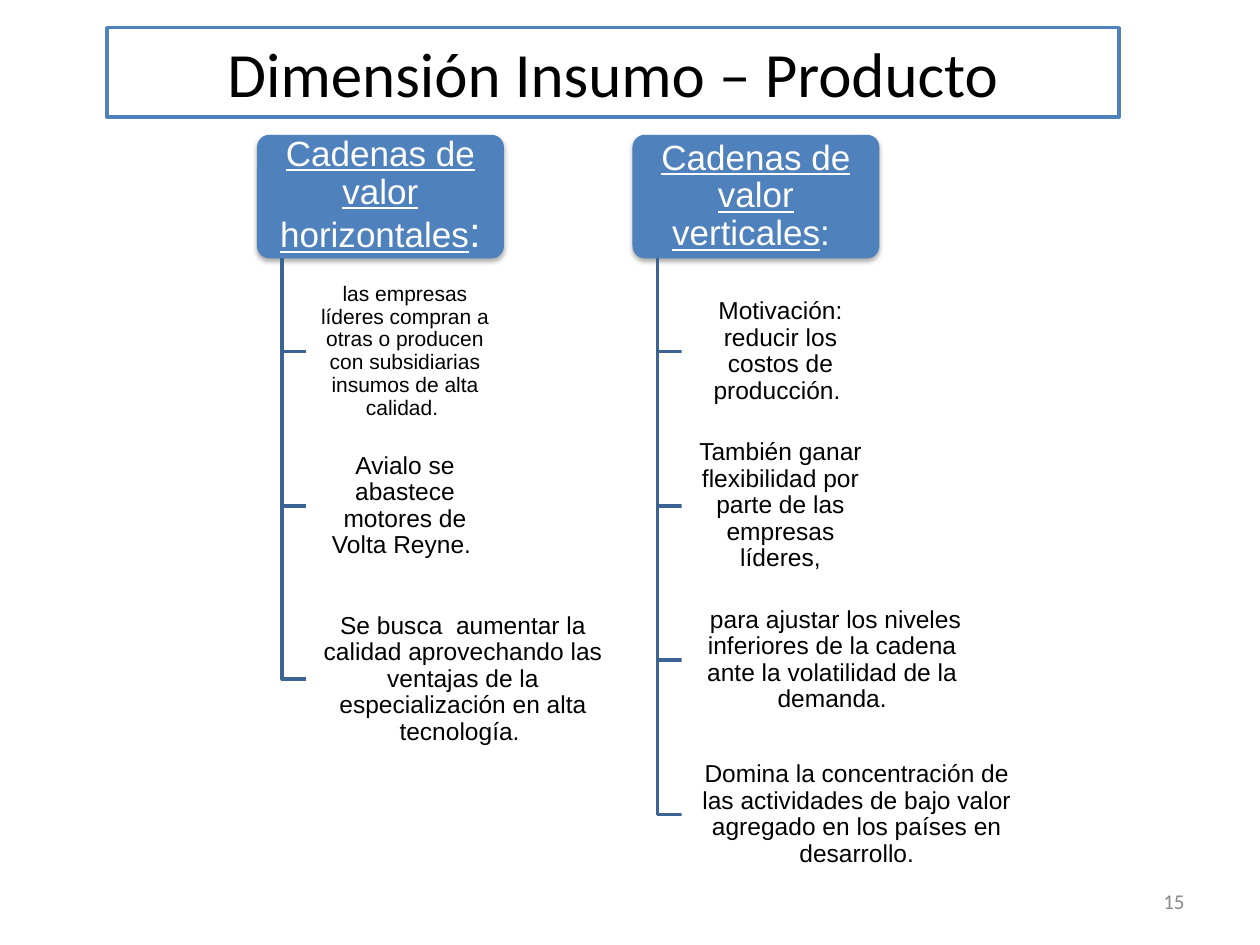
from lxml import etree
from pptx import Presentation
from pptx.dml.color import RGBColor
from pptx.enum.shapes import MSO_SHAPE
from pptx.enum.text import MSO_ANCHOR, MSO_AUTO_SIZE, PP_ALIGN
from pptx.oxml.ns import qn
from pptx.util import Inches, Pt

ROUNDED = MSO_SHAPE.ROUNDED_RECTANGLE
MIDDLE = MSO_ANCHOR.MIDDLE
CENTER, RIGHT = PP_ALIGN.CENTER, PP_ALIGN.RIGHT

COLORS = {"blue": "4F81BD", "branch": "3B6495", "white": "FFFFFF",
          "black": "000000", "gray": "898989"}

TITLE = "Dimensión Insumo – Producto"
PAGE = "15"

# Each chain: left edge, heading, heading ending (text, size),
# and items (text, size, width, height)
CHAINS = [
    (2.04, "Cadenas de valor horizontales", (":", 24), [
        ("las empresas líderes compran a otras o producen con subsidiarias "
         "insumos de alta calidad. ", 12, 1.57, 0.98),
        ("Avialo se abastece motores de Volta Reyne. ", 14, 1.57, 0.98),
        ("Se busca  aumentar la calidad aprovechando las ventajas de la "
         "especialización en alta tecnología. ", 14, 2.49, 1.28),
    ]),
    (5.02, "Cadenas de valor verticales", (": ", 20), [
        ("Motivación: reducir los costos de producción. ", 14, 1.57, 0.98),
        ("También ganar flexibilidad por parte de las empresas líderes,",
         14, 1.57, 0.98),
        (" para ajustar los niveles inferiores de la cadena ante la "
         "volatilidad de la demanda.", 14, 2.39, 0.98),
        ("Domina la concentración de las actividades de bajo valor agregado "
         "en los países en desarrollo.", 14, 2.78, 0.98),
    ]),
]

HEAD_TOP, HEAD_W, HEAD_H = 1.07, 1.96, 0.98
HEAD_BOTTOM = HEAD_TOP + HEAD_H
ITEM_TOP, ITEM_STEP = 2.3, 1.225
TRUNK_DX, ITEM_DX = 0.2, 0.39


def rgb(name):
    return RGBColor.from_string(COLORS[name])


def style_run(r, size, color, font="Arial"):
    r.font.size = Pt(size)
    r.font.name = font
    r.font.color.rgb = rgb(color)


def set_frame(tf, inset_x, inset_y):
    tf.word_wrap = True
    tf.auto_size = MSO_AUTO_SIZE.NONE
    tf.vertical_anchor = MIDDLE
    tf.margin_left = tf.margin_right = Inches(inset_x)
    tf.margin_top = tf.margin_bottom = Inches(inset_y)


def add_box(slide, x, y, w, h, fill, inset_x, inset_y):
    """Add a rounded box and return it with its centred first paragraph."""
    s = slide.shapes.add_shape(ROUNDED, Inches(x), Inches(y), Inches(w), Inches(h))
    s.adjustments[0] = 0.1
    s.fill.solid()
    s.fill.fore_color.rgb = rgb(fill)
    s.line.fill.background()
    s.shadow.inherit = False
    set_frame(s.text_frame, inset_x, inset_y)
    p = s.text_frame.paragraphs[0]
    p.alignment = CENTER
    p.line_spacing = 0.9
    return s, p


def add_soft_shadow(s):
    effects = s.element.spPr.find(qn("a:effectLst"))
    shadow = etree.SubElement(effects, qn("a:outerShdw"), blurRad=str(Pt(3.1)),
                              dist=str(Pt(1.8)), dir="5400000", rotWithShape="0")
    color = etree.SubElement(shadow, qn("a:srgbClr"), val=COLORS["black"])
    etree.SubElement(color, qn("a:alpha"), val="35000")


def add_heading(slide, x, heading, ending):
    s, p = add_box(slide, x, HEAD_TOP, HEAD_W, HEAD_H, "blue", 0.05, 0.03)
    add_soft_shadow(s)
    for text, size, underline in ((heading, 20, True), (*ending, False)):
        r = p.add_run()
        r.text = text
        style_run(r, size, "white")
        r.font.underline = underline


def add_branch(slide, x, y, end_x):
    """Draw an elbow from the heading's bottom edge to an item's middle."""
    builder = slide.shapes.build_freeform(Inches(x), Inches(HEAD_BOTTOM))
    builder.add_line_segments([(Inches(x), Inches(y)), (Inches(end_x), Inches(y))],
                              close=False)
    s = builder.convert_to_shape()
    s.fill.background()
    s.line.color.rgb = rgb("branch")
    s.line.width = Pt(2)
    s.shadow.inherit = False


def add_chain(slide, x, heading, ending, items):
    add_heading(slide, x, heading, ending)
    for i, (text, size, w, h) in enumerate(items):
        y = ITEM_TOP + i * ITEM_STEP
        add_branch(slide, x + TRUNK_DX, y + h / 2, x + ITEM_DX)
        _, p = add_box(slide, x + ITEM_DX, y, w, h, "white", 0.03, 0.02)
        p.text = text
        style_run(p.runs[0], size, "black")


def add_title(slide):
    s = slide.shapes.title
    s.left, s.top, s.width, s.height = map(Inches, (0.85, 0.22, 8.03, 0.71))
    s.fill.solid()
    s.fill.fore_color.rgb = rgb("white")
    s.line.color.rgb = rgb("blue")
    s.line.width = Pt(2)
    s.text_frame.text = TITLE
    set_frame(s.text_frame, 0.1, 0.05)
    p = s.text_frame.paragraphs[0]
    p.alignment = CENTER
    style_run(p.runs[0], 36, "black", "Calibri")


def add_page_number(slide):
    s = slide.shapes.add_textbox(*map(Inches, (7.17, 6.95, 2.33, 0.4)))
    s.text_frame.text = PAGE
    set_frame(s.text_frame, 0.1, 0.05)
    p = s.text_frame.paragraphs[0]
    p.alignment = RIGHT
    style_run(p.runs[0], 12, "gray", "Calibri")


def main():
    prs = Presentation()
    prs.slide_width, prs.slide_height = Inches(10), Inches(7.5)
    slide = prs.slides.add_slide(prs.slide_layouts.get_by_name("Title Only"))
    add_title(slide)
    for chain in CHAINS:
        add_chain(slide, *chain)
    add_page_number(slide)
    prs.save("out.pptx")


if __name__ == "__main__":
    main()
